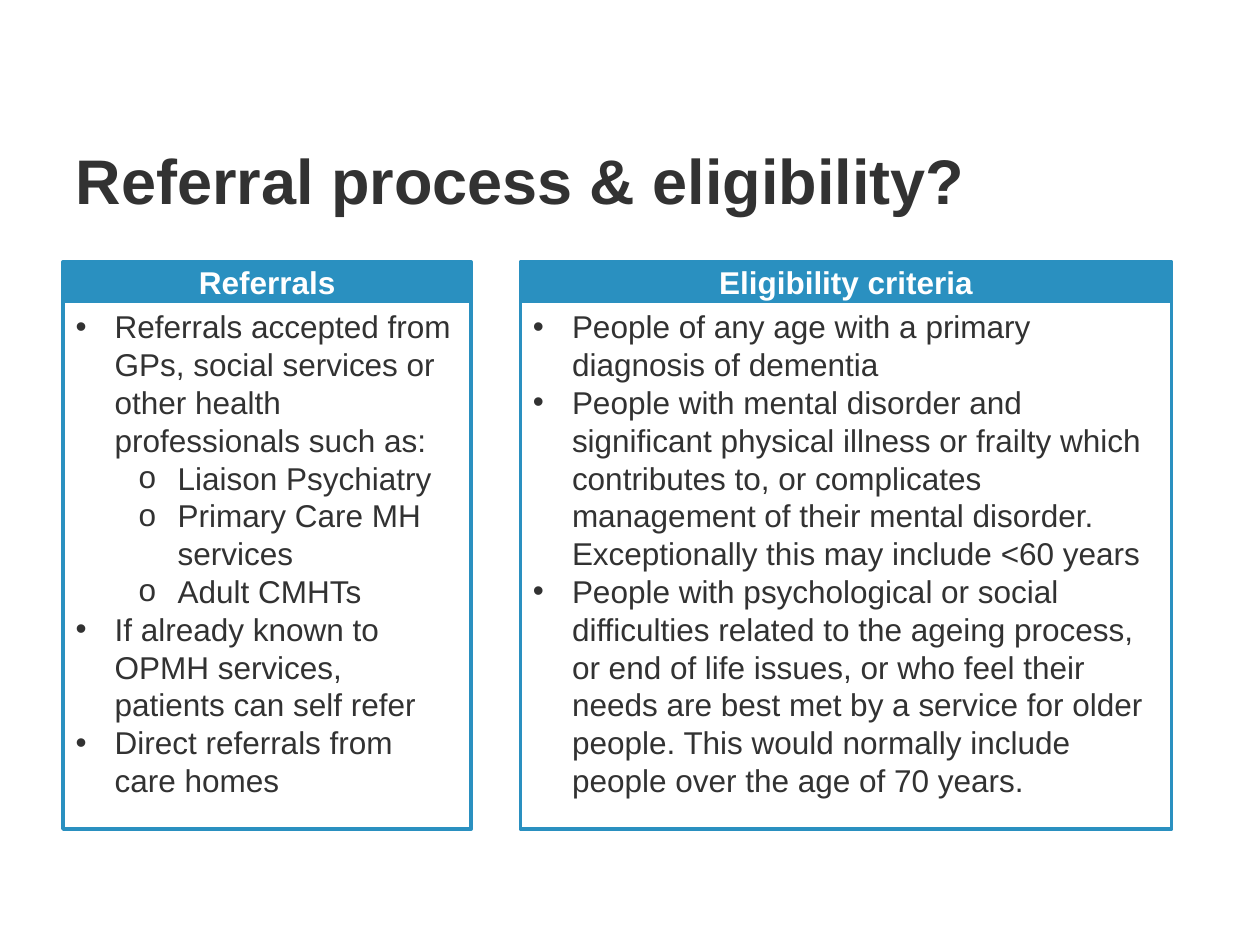
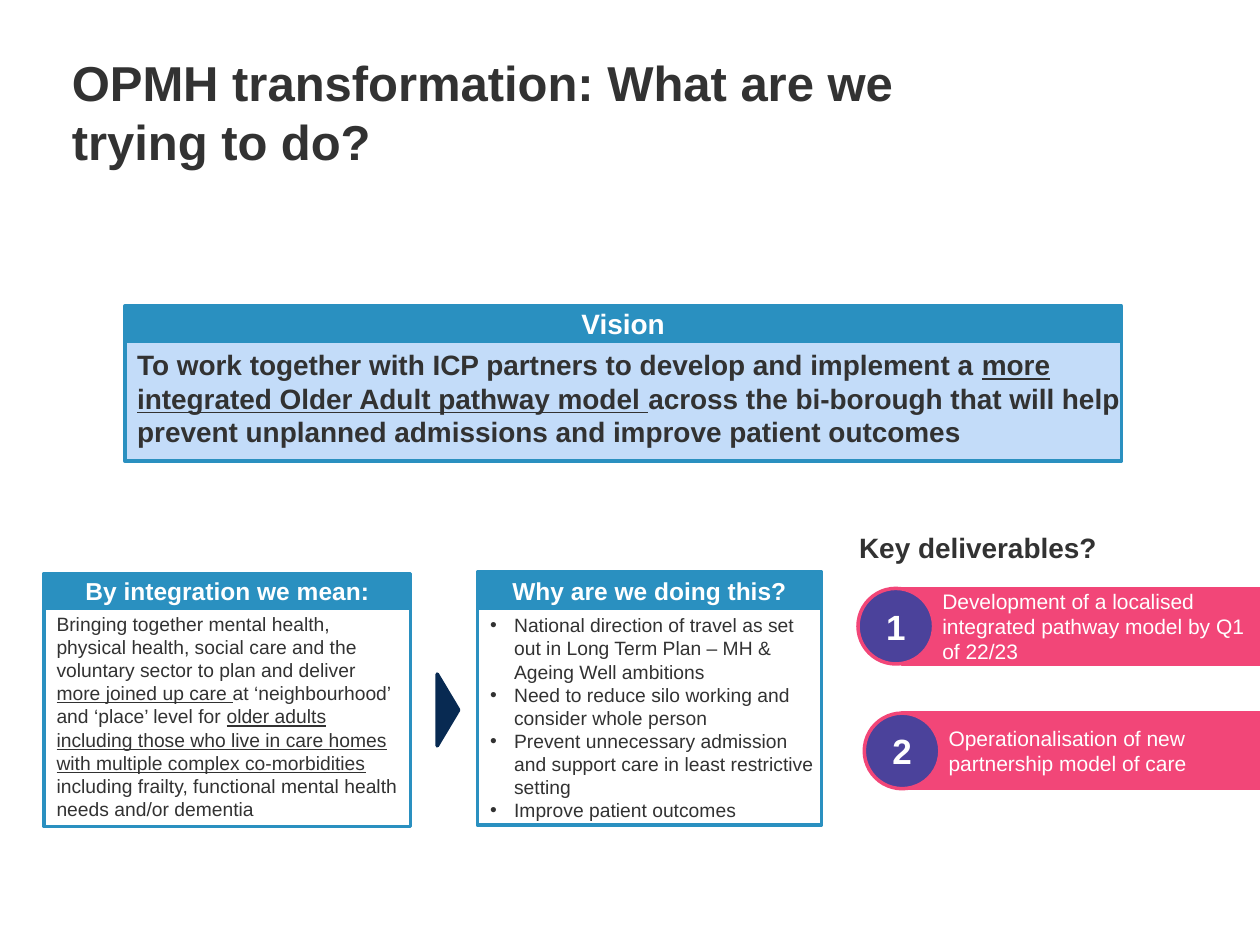
from lxml.etree import SubElement
from pptx import Presentation
from pptx.dml.color import RGBColor
from pptx.enum.shapes import MSO_SHAPE
from pptx.enum.text import MSO_ANCHOR, MSO_AUTO_SIZE, PP_ALIGN
from pptx.oxml.ns import qn
from pptx.util import Inches, Pt

FONT = "Arial"
SLIDE_WIDTH = 10
SLIDE_HEIGHT = 7.5
DARK = RGBColor(0x32, 0x32, 0x32)
WHITE = RGBColor(0xFF, 0xFF, 0xFF)
BLUE = RGBColor(0x2A, 0x90, 0xC0)
PALE_BLUE = RGBColor(0xC3, 0xDC, 0xF9)
NAVY = RGBColor(0x08, 0x2A, 0x52)
PINK = RGBColor(0xF2, 0x46, 0x78)
PURPLE = RGBColor(0x4B, 0x42, 0x9B)

REFERRALS = [
    (0, "Referrals accepted from GPs, social services or other health professionals such as:"),
    (1, "Liaison Psychiatry"),
    (1, "Primary Care MH services"),
    (1, "Adult CMHTs"),
    (0, "If already known to OPMH services, patients can self refer"),
    (0, "Direct referrals from care homes"),
]
ELIGIBILITY = [
    (0, "People of any age with a primary diagnosis of dementia"),
    (0, "People with mental disorder and significant physical illness or frailty which "
        "contributes to, or complicates management of their mental disorder. "
        "Exceptionally this may include <60 years"),
    (0, "People with psychological or social difficulties related to the ageing process, "
        "or end of life issues, or who feel their needs are best met by a service for "
        "older people. This would normally include people over the age of 70 years."),
]
VISION = [
    ("To work together with ICP partners to develop and implement a ", False),
    ("more integrated Older Adult pathway model ", True),
    ("across the bi-borough that will help prevent unplanned admissions "
     "and improve patient outcomes", False),
]
INTEGRATION = [
    ("Bringing together mental health, physical health, social care and the "
     "voluntary sector to plan and deliver ", False),
    ("more joined up care ", True),
    ("at ‘neighbourhood’ and ‘place’ level for ", False),
    ("older adults including those who live in care homes with multiple "
     "complex co-morbidities", True),
    (" including frailty, functional mental health needs and/or dementia", False),
]
REASONS = [
    (0, "National direction of travel as set out in Long Term Plan – MH & Ageing Well ambitions"),
    (0, "Need to reduce silo working and consider whole person"),
    (0, "Prevent unnecessary admission and support care in least restrictive setting"),
    (0, "Improve patient outcomes"),
]
DELIVERABLES = [
    ("1", 6.81, 4.67, "Development of a localised integrated pathway model by Q1 of 22/23"),
    ("2", 6.86, 5.66, "Operationalisation of new partnership model of care"),
]


def place(shape, left, top, width, height):
    shape.left, shape.top = Inches(left), Inches(top)
    shape.width, shape.height = Inches(width), Inches(height)


def format_paragraph(paragraph, size, color, bold=False, align=PP_ALIGN.LEFT):
    paragraph.alignment = align
    paragraph.space_before = Pt(0)
    paragraph.font.name = FONT
    paragraph.font.size = Pt(size)
    paragraph.font.bold = bold
    paragraph.font.color.rgb = color


def prepare_frame(shape, anchor=MSO_ANCHOR.TOP):
    frame = shape.text_frame
    frame.word_wrap = True
    frame.auto_size = MSO_AUTO_SIZE.NONE
    frame.vertical_anchor = anchor
    return frame


def set_title(slide, text, box, size):
    title = slide.shapes.title
    place(title, *box)
    frame = prepare_frame(title)
    frame.text = text
    format_paragraph(frame.paragraphs[0], size, DARK, bold=True)


def add_bullet(paragraph, indent):
    properties = paragraph._p.get_or_add_pPr()
    properties.set("marL", str(Inches(indent + 0.5 * paragraph.level)))
    properties.set("indent", str(-Inches(indent)))
    SubElement(properties, qn("a:buFont"), typeface=FONT)
    SubElement(properties, qn("a:buChar"), char="•o"[paragraph.level])


def fill_list(placeholder, box, items, size, indent):
    place(placeholder, *box)
    frame = prepare_frame(placeholder)
    for index, (level, text) in enumerate(items):
        paragraph = frame.add_paragraph() if index else frame.paragraphs[0]
        paragraph.text = text
        paragraph.level = level
        add_bullet(paragraph, indent)
        format_paragraph(paragraph, size, DARK)


def add_text(slide, box, runs, size, color=DARK, bold=False, anchor=MSO_ANCHOR.TOP):
    text_box = slide.shapes.add_textbox(*map(Inches, box))
    paragraph = prepare_frame(text_box, anchor).paragraphs[0]
    for text, underlined in runs:
        run = paragraph.add_run()
        run.text = text
        if underlined:
            run.font.underline = True
    format_paragraph(paragraph, size, color, bold)


def add_block(slide, kind, box, fill, line, text="", size=18):
    shape = slide.shapes.add_shape(kind, *map(Inches, box))
    shape.shadow.inherit = False
    if fill is None:
        shape.fill.background()
    else:
        shape.fill.solid()
        shape.fill.fore_color.rgb = fill
    shape.line.color.rgb = line
    shape.line.width = Pt(2)
    if text:
        frame = prepare_frame(shape, MSO_ANCHOR.MIDDLE)
        frame.text = text
        format_paragraph(frame.paragraphs[0], size, WHITE, True, PP_ALIGN.CENTER)
    return shape


def add_panel(slide, heading, box, heading_height, size, fill=None):
    left, top, width, height = box
    body = (left, top + heading_height, width, height - heading_height)
    add_block(slide, MSO_SHAPE.RECTANGLE, body, fill, BLUE)
    add_block(slide, MSO_SHAPE.RECTANGLE, (left, top, width, heading_height),
              BLUE, BLUE, heading, size)


def add_deliverable(slide, number, left, top, text):
    diameter, bar_left, text_left = 0.6, 7.16, left + 0.57
    add_block(slide, MSO_SHAPE.RECTANGLE,
              (bar_left, top, SLIDE_WIDTH - bar_left, diameter), PINK, PINK)
    add_block(slide, MSO_SHAPE.OVAL, (left, top, diameter, diameter),
              PURPLE, PINK, number, 20)
    add_text(slide, (text_left, top, SLIDE_WIDTH - text_left, diameter),
             [(text, False)], 12, WHITE, anchor=MSO_ANCHOR.MIDDLE)


def build_referral_slide(presentation):
    slide = presentation.slides.add_slide(presentation.slide_layouts.get_by_name("Two Content"))
    set_title(slide, "Referral process & eligibility?", (0.5, 1.07, 9, 0.71), 36)
    columns = [
        (1, "Referrals", 0.5, 3.24, REFERRALS),
        (2, "Eligibility criteria", 4.13, 5.17, ELIGIBILITY),
    ]
    for index, heading, left, width, items in columns:
        add_panel(slide, heading, (left, 2.08, width, 4.5), 0.31, 18)
        fill_list(slide.placeholders[index], (left, 2.39, width, 4.27), items, 18, 0.31)


def build_transformation_slide(presentation):
    layout = presentation.slide_layouts.get_by_name("Title and Content")
    slide = presentation.slides.add_slide(layout)
    set_title(slide, "OPMH transformation: What are we trying to do?",
              (0.47, 0.37, 7.76, 0.71), 28)

    add_panel(slide, "Vision", (0.99, 2.43, 7.91, 1.23), 0.28, 16, PALE_BLUE)
    add_text(slide, (0.99, 2.71, 8.01, 0.91), VISION, 16, bold=True)

    add_panel(slide, "By integration we mean:", (0.35, 4.55, 2.91, 2.01), 0.28, 14)
    add_text(slide, (0.35, 4.81, 2.91, 1.77), INTEGRATION, 11)

    arrow = add_block(slide, MSO_SHAPE.ISOSCELES_TRIANGLE, (3.27, 5.55, 0.57, 0.17), NAVY, NAVY)
    arrow.rotation = 90

    add_panel(slide, "Why are we doing this?", (3.79, 4.54, 2.73, 2.01), 0.29, 14)
    fill_list(slide.placeholders[1], (3.79, 4.82, 2.84, 1.77), REASONS, 11, 0.19)

    add_text(slide, (6.72, 4.16, 2.89, 0.37), [("Key deliverables?", False)], 16, bold=True)
    for deliverable in DELIVERABLES:
        add_deliverable(slide, *deliverable)


def main():
    presentation = Presentation()
    presentation.slide_width = Inches(SLIDE_WIDTH)
    presentation.slide_height = Inches(SLIDE_HEIGHT)
    build_referral_slide(presentation)
    build_transformation_slide(presentation)
    presentation.save("out.pptx")


if __name__ == "__main__":
    main()
